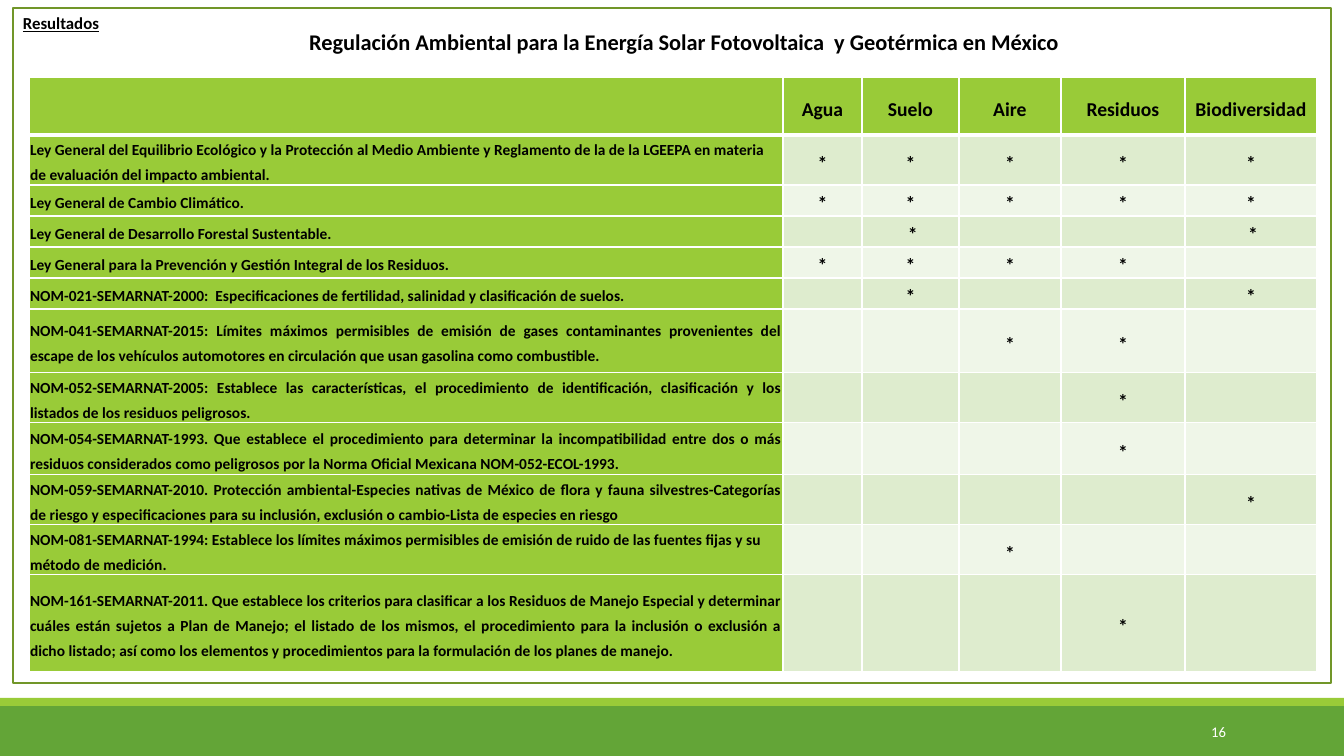
import pptx
import pptx.dml.color
import pptx.enum.shapes
import pptx.enum.text
import pptx.oxml
import pptx.oxml.ns
import pptx.util

RGBColor = pptx.dml.color.RGBColor
ALIGN = pptx.enum.text.PP_ALIGN
ANCHOR = pptx.enum.text.MSO_ANCHOR

SECTION = "Resultados"
TITLE = "Regulación Ambiental para la Energía Solar Fotovoltaica  y Geotérmica en México"
PAGE = "16"
HEADINGS = ("", "Agua", "Suelo", "Aire", "Residuos", "Biodiversidad")
LEFT, JUSTIFY = ALIGN.LEFT, ALIGN.JUSTIFY
LAWS = [
    (50, LEFT, "Ley General del Equilibrio Ecológico y la Protección al Medio Ambiente y Reglamento de la de la LGEEPA en materia de evaluación del impacto ambiental.",
     ("*", "*", "*", "*", "*")),
    (31, LEFT, "Ley General de Cambio Climático.", ("*", "*", "*", "*", "*")),
    (31, LEFT, "Ley General de Desarrollo Forestal Sustentable.", ("", " *", "", "", " *")),
    (31, LEFT, "Ley General para la Prevención y Gestión Integral de los Residuos.",
     ("*", "*", "*", "*", "")),
    (31, JUSTIFY, "NOM-021-SEMARNAT-2000:  Especificaciones de fertilidad, salinidad y clasificación de suelos.",
     ("", "*", "", "", "*")),
    (64, JUSTIFY, "NOM-041-SEMARNAT-2015: Límites máximos permisibles de emisión de gases contaminantes provenientes del escape de los vehículos automotores en circulación que usan gasolina como combustible.",
     ("", "", "*", "*", "")),
    (50, JUSTIFY, "NOM-052-SEMARNAT-2005: Establece las características, el procedimiento de identificación, clasificación y los listados de los residuos peligrosos.",
     ("", "", "", "*", "")),
    (52, JUSTIFY, "NOM-054-SEMARNAT-1993. Que establece el procedimiento para determinar la incompatibilidad entre dos o más residuos considerados como peligrosos por la Norma Oficial Mexicana NOM-052-ECOL-1993.",
     ("", "", "", "*", "")),
    (50, JUSTIFY, "NOM-059-SEMARNAT-2010. Protección ambiental-Especies nativas de México de flora y fauna silvestres-Categorías de riesgo y especificaciones para su inclusión, exclusión o cambio-Lista de especies en riesgo",
     ("", "", "", "", "*")),
    (50, LEFT, "NOM-081-SEMARNAT-1994: Establece los límites máximos permisibles de emisión de ruido de las fuentes fijas y su método de medición.",
     ("", "", "*", "", "")),
    (97, JUSTIFY, "NOM-161-SEMARNAT-2011. Que establece los criterios para clasificar a los Residuos de Manejo Especial y determinar cuáles están sujetos a Plan de Manejo; el listado de los mismos, el procedimiento para la inclusión o exclusión a dicho listado; así como los elementos y procedimientos para la formulación de los planes de manejo.",
     ("", "", "", "*", "")),
]
COLUMN_WIDTHS = (754, 79, 97, 102, 124, 132)
HEADING_HEIGHT = 58

BLACK = RGBColor(0x00, 0x00, 0x00)
WHITE = RGBColor(0xFF, 0xFF, 0xFF)
DARK_GREEN = RGBColor(0x63, 0xA5, 0x37)
LIME = RGBColor(0x99, 0xCB, 0x38)
OLIVE = RGBColor(0x71, 0x96, 0x29)
BANDS = (RGBColor(0xDE, 0xEC, 0xCE), RGBColor(0xEF, 0xF6, 0xE8))

EMU_PER_PX = 9071


def px(length):
    return pptx.util.Emu(length * EMU_PER_PX)


def style(paragraph, size, color=BLACK, bold=True, align=LEFT, underline=None):
    paragraph.alignment = align
    for run in paragraph.runs:
        run.font.name = "Calibri"
        run.font.size = pptx.util.Pt(size)
        run.font.bold = bold
        run.font.underline = underline
        run.font.color.rgb = color


def add_box(slide, left, top, width, height, fill, line=None):
    box = slide.shapes.add_shape(pptx.enum.shapes.MSO_SHAPE.RECTANGLE,
                                 px(left), px(top), px(width), px(height))
    box.shadow.inherit = False
    box.fill.solid()
    box.fill.fore_color.rgb = fill
    if line is None:
        box.line.fill.background()
    else:
        box.line.color.rgb = line
        box.line.width = pptx.util.Pt(1.25)
    return box


def add_label(slide, text, left, top, width, height, anchor=ANCHOR.TOP, **look):
    label = slide.shapes.add_textbox(px(left), px(top), px(width), px(height))
    label.text_frame.word_wrap = True
    label.text_frame.vertical_anchor = anchor
    label.text_frame.text = text
    style(label.text_frame.paragraphs[0], **look)


def set_borders(cell, top, bottom):
    properties = cell._tc.get_or_add_tcPr()
    edges = (("L", 1), ("R", 1), ("T", top), ("B", bottom))
    for position, (edge, points) in enumerate(edges):
        properties.insert(position, pptx.oxml.parse_xml(
            f'<a:ln{edge} {pptx.oxml.ns.nsdecls("a")} w="{points * 12700}">'
            f'<a:solidFill><a:srgbClr val="{WHITE}"/></a:solidFill></a:ln{edge}>'))


def fill_cell(cell, text, size, align, fill):
    cell.fill.solid()
    cell.fill.fore_color.rgb = fill
    cell.margin_left = cell.margin_right = px(1)
    cell.margin_top = cell.margin_bottom = 0
    cell.vertical_anchor = ANCHOR.MIDDLE
    cell.text_frame.text = text
    paragraph = cell.text_frame.paragraphs[0]
    if text:
        paragraph.line_spacing = 1.3
        paragraph.space_after = pptx.util.Pt(8)
        style(paragraph, size, align=align)
    else:
        paragraph._p.get_or_add_endParaRPr().set("sz", "1100")


def add_regulations(slide):
    heights = [HEADING_HEIGHT] + [law[0] for law in LAWS]
    table = slide.shapes.add_table(len(heights), len(HEADINGS), px(29), px(77),
                                   px(sum(COLUMN_WIDTHS)), px(sum(heights))).table
    for column, width in zip(table.columns, COLUMN_WIDTHS):
        column.width = px(width)
    for row, height in zip(table.rows, heights):
        row.height = px(height)
    for c, heading in enumerate(HEADINGS):
        fill_cell(table.cell(0, c), heading, 14, ALIGN.CENTER, LIME)
        set_borders(table.cell(0, c), 1, 3)
    for r, (_, align, law, marks) in enumerate(LAWS, start=1):
        fill_cell(table.cell(r, 0), law, 11, align, LIME)
        for c, mark in enumerate(marks, start=1):
            fill_cell(table.cell(r, c), mark, 14, ALIGN.CENTER, BANDS[(r - 1) % 2])
        for c in range(len(HEADINGS)):
            set_borders(table.cell(r, c), 3 if r == 1 else 1, 1)


def main():
    deck = pptx.Presentation()
    deck.slide_width, deck.slide_height = px(1344), px(756)
    slide = deck.slides.add_slide(deck.slide_layouts[5])

    title = slide.shapes.title
    title.left, title.top, title.width, title.height = px(299), px(23), px(774), px(37)
    title.text_frame.text = TITLE
    title.text_frame.word_wrap = True
    title.text_frame.auto_size = pptx.enum.text.MSO_AUTO_SIZE.NONE
    title.text_frame.vertical_anchor = ANCHOR.TOP
    title.text_frame.margin_right = 0
    style(title.text_frame.paragraphs[0], 16)

    add_box(slide, 0, 706, 1344, 50, DARK_GREEN)
    add_box(slide, 0, 698, 1344, 8, LIME)
    frame = add_box(slide, 13, 8, 1318, 675, WHITE, OLIVE)
    title._element.addprevious(frame._element)
    add_label(slide, SECTION, 13, 8, 140, 30, size=12, underline=True)
    add_regulations(slide)
    add_label(slide, PAGE, 1092, 712, 144, 40, ANCHOR.MIDDLE,
              size=10.5, color=WHITE, bold=False, align=ALIGN.RIGHT)
    deck.save("out.pptx")


if __name__ == "__main__":
    main()
